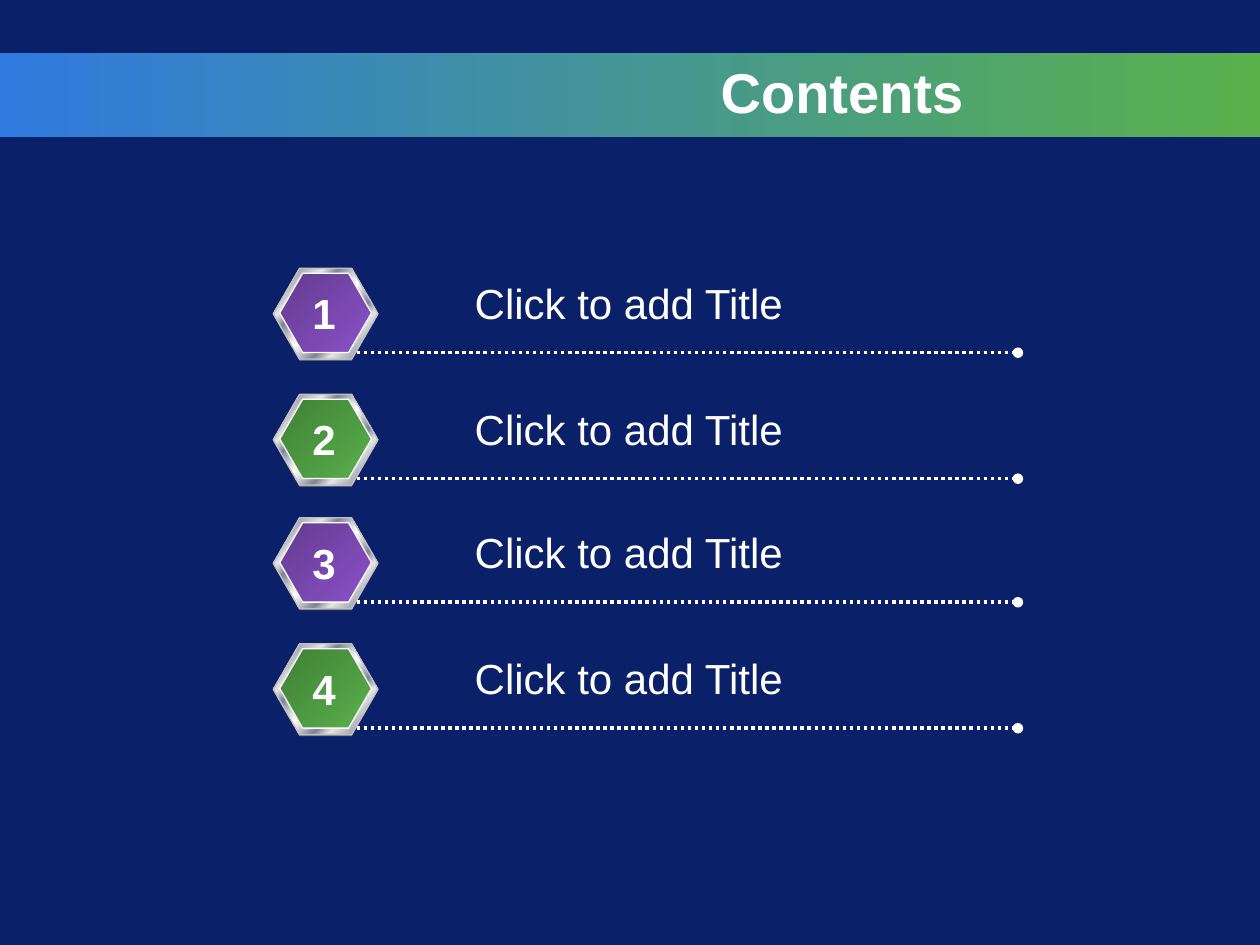
from lxml import etree
from pptx import Presentation
from pptx.dml.color import RGBColor
from pptx.enum.dml import MSO_LINE
from pptx.enum.shapes import MSO_CONNECTOR, MSO_SHAPE
from pptx.enum.text import MSO_ANCHOR, MSO_AUTO_SIZE, PP_ALIGN
from pptx.oxml.ns import qn
from pptx.util import Cm, Pt

HEXAGON, RECTANGLE = MSO_SHAPE.HEXAGON, MSO_SHAPE.RECTANGLE
STRAIGHT, DOTTED = MSO_CONNECTOR.STRAIGHT, MSO_LINE.ROUND_DOT
LEFT, CENTER, RIGHT = PP_ALIGN.LEFT, PP_ALIGN.CENTER, PP_ALIGN.RIGHT
MIDDLE, GROW, NO_FIT = MSO_ANCHOR.MIDDLE, MSO_AUTO_SIZE.SHAPE_TO_FIT_TEXT, MSO_AUTO_SIZE.NONE

FONT = "Arial"
NAVY, WHITE, GRAY, SILVER = "0A2068", "FFFFFF", "808080", "C0C0C0"
BAR = [(0, "2F7ADF"), (100, "5AB14B")]
PURPLE = [(0, "633B8F"), (100, "8A52C8")]
GREEN = [(0, "407F36"), (100, "5AB14B")]
METAL = [(0, "E6E6E6"), (7, "7D8496"), (26, "E6E6E6"), (34, "7D8496"),
         (46, "E6E6E6"), (50, "FFFFFF"), (54, "E6E6E6"), (66, "7D8496"),
         (74, "E6E6E6"), (93, "7D8496"), (100, "E6E6E6")]
ITEMS = ["Click to add Title"] * 4
ROW_PITCH, PAIR_PITCH = 2.54, 5.03


def color(value):
    return RGBColor.from_string(value)


def fill_solid(fill, value):
    fill.solid()
    fill.fore_color.rgb = color(value)


def fill_gradient(shape, stops, clockwise):
    shape.fill.gradient()
    shape.fill.gradient_angle = (360 - clockwise) % 360
    stop_list = shape._element.spPr.find(qn("a:gradFill")).find(qn("a:gsLst"))
    for stop in list(stop_list):
        stop_list.remove(stop)
    for position, value in stops:
        stop = etree.SubElement(stop_list, qn("a:gs"), pos=str(position * 1000))
        etree.SubElement(stop, qn("a:srgbClr"), val=value)


def add_shape(shapes, kind, left, top, width, height, outline=None):
    shape = shapes.add_shape(kind, Cm(left), Cm(top), Cm(width), Cm(height))
    shape.shadow.inherit = False
    if outline:
        shape.line.color.rgb = color(outline)
        shape.line.width = Pt(0.75)
    else:
        shape.line.fill.background()
    return shape


def add_hexagon(shapes, left, top, width, height, outline=None):
    shape = add_shape(shapes, HEXAGON, left, top, width, height, outline)
    shape.adjustments[0] = 0.289
    return shape


def format_text(para, size, align, bold):
    para.alignment = align
    for span in para.runs:
        span.font.name = FONT
        span.font.size = Pt(size)
        span.font.bold = bold
        span.font.color.rgb = color(WHITE)


def add_label(shapes, text, left, top, width, align, bold):
    box = shapes.add_textbox(Cm(left), Cm(top), Cm(width), Cm(1.27))
    frame = box.text_frame
    frame.word_wrap = False
    frame.auto_size = GROW
    frame.text = text
    format_text(frame.paragraphs[0], 24, align, bold)


def add_dotted_line(shapes, left, right, top):
    line = shapes.add_connector(STRAIGHT, Cm(left), Cm(top), Cm(right), Cm(top))
    line.line.color.rgb = color(WHITE)
    line.line.width = Pt(2)
    line.line.dash_style = DOTTED
    properties = line._element.spPr
    etree.SubElement(properties.find(qn("a:ln")), qn("a:tailEnd"), type="oval")
    etree.SubElement(properties, qn("a:effectLst"))


def add_title_bar(page, left, top, width, height):
    title = page.shapes.title
    bar = add_shape(page.shapes, RECTANGLE, left, top, width, height)
    fill_gradient(bar, BAR, 0)
    title._element.addprevious(bar._element)
    title.left, title.top = Cm(left + 1.27), Cm(top)
    title.width, title.height = Cm(18.41), Cm(1.57)
    frame = title.text_frame
    frame.text = "Contents"
    frame.vertical_anchor = MIDDLE
    frame.auto_size = NO_FIT
    format_text(frame.paragraphs[0], 32, RIGHT, True)


def add_item(page, left, top, number, text, stops):
    shapes = page.shapes.add_group_shape().shapes
    under = add_hexagon(shapes, left, top + 0.03, 2.11, 1.83)
    fill_solid(under.fill, GRAY)
    frame = add_hexagon(shapes, left, top, 2.11, 1.83, SILVER)
    fill_gradient(frame, METAL, 45)
    face = add_hexagon(shapes, left + 0.13, top + 0.1, 1.85, 1.6, WHITE)
    fill_gradient(face, stops, 45)
    add_dotted_line(shapes, left + 1.68, left + 15.01, top + 1.7)
    add_label(shapes, text, left + 3.81, top + 0.05, 6.78, LEFT, False)
    add_label(shapes, str(number), left + 0.53, top + 0.27, 0.99, CENTER, True)


def add_contents(page, left, top):
    for index, text in enumerate(ITEMS):
        pair, member = divmod(index, 2)
        row_top = top + pair * PAIR_PITCH + member * ROW_PITCH
        add_item(page, left, row_top, index + 1, text, (PURPLE, GREEN)[member])


def main():
    deck = Presentation()
    deck.slide_width, deck.slide_height = Cm(25.4), Cm(19.05)
    page = deck.slides.add_slide(deck.slide_layouts[5])
    fill_solid(page.background.fill, NAVY)
    add_title_bar(page, 0, 1.06, 25.4, 1.7)
    add_contents(page, 5.51, 5.41)
    deck.save("out.pptx")


if __name__ == "__main__":
    main()
